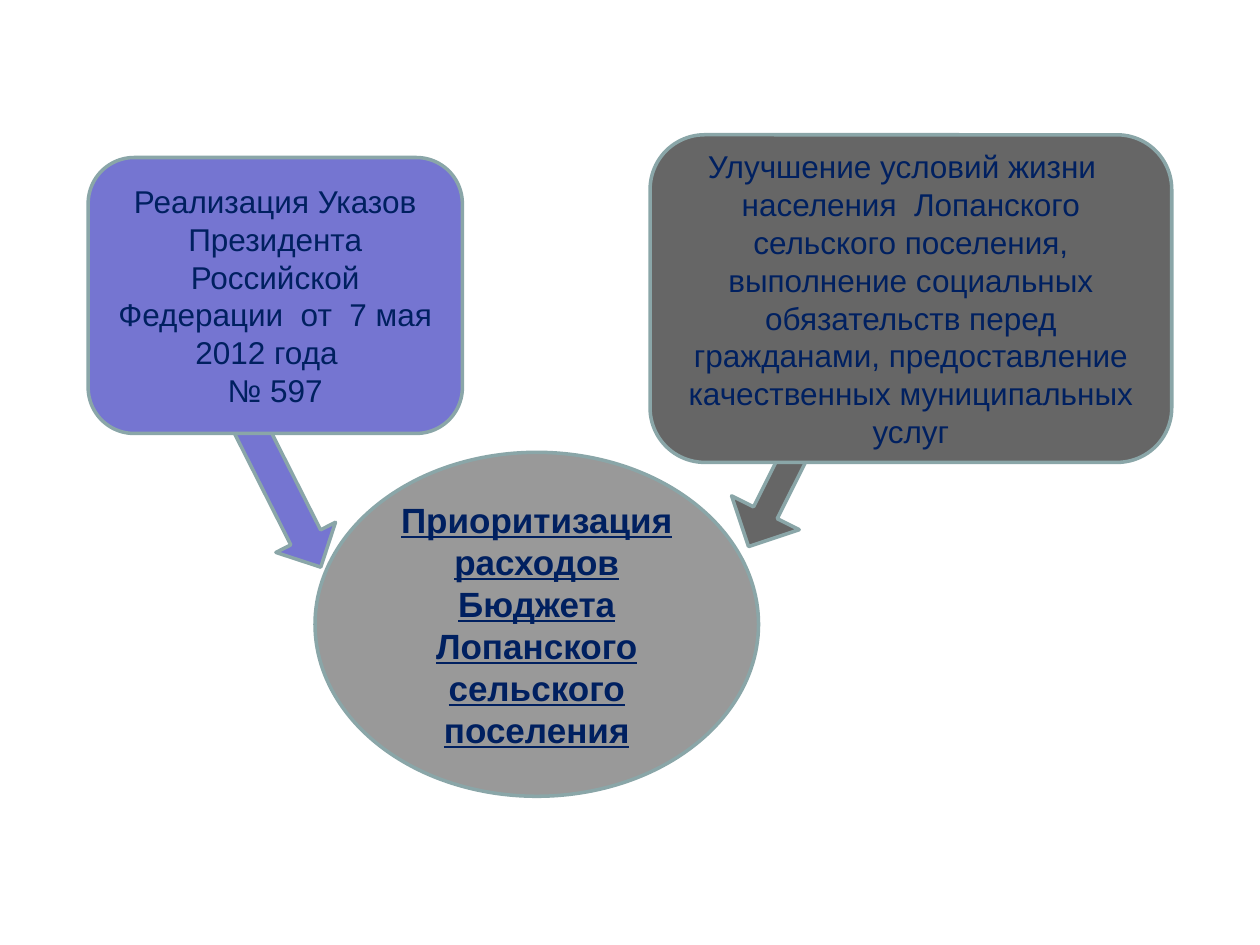
from dataclasses import dataclass

import pptx
import pptx.dml.color
import pptx.enum.shapes
import pptx.enum.text
import pptx.util

Inches = pptx.util.Inches
Shapes = pptx.enum.shapes.MSO_SHAPE


@dataclass(frozen=True)
class Theme:
    """Colours, font and sizes used on the slide."""
    violet: str = "7575D1"
    dark_gray: str = "666666"
    light_gray: str = "999999"
    outline: str = "8AA6A8"
    text: str = "002060"
    font: str = "Arial"
    body_size: int = 18
    goal_size: int = 20
    line_width: int = 2


THEME = Theme()


def color(value):
    """Turn a hex string into a colour."""
    return pptx.dml.color.RGBColor.from_string(value)


def add_outlined_shape(page, kind, box, fill):
    """Add a filled, outlined shape in a box of left, top, width, height."""
    shape = page.shapes.add_shape(kind, *map(Inches, box))
    shape.shadow.inherit = False
    shape.fill.solid()
    shape.fill.fore_color.rgb = color(fill)
    shape.line.color.rgb = color(THEME.outline)
    shape.line.width = pptx.util.Pt(THEME.line_width)
    return shape


def write_centered(shape, text, size, emphasis=False):
    """Write centred paragraphs in a shape, bold and underlined if emphasised."""
    frame = shape.text_frame
    frame.word_wrap = True
    frame.vertical_anchor = pptx.enum.text.MSO_ANCHOR.MIDDLE
    frame.text = text
    for para in frame.paragraphs:
        para.alignment = pptx.enum.text.PP_ALIGN.CENTER
        for span in para.runs:
            span.font.name = THEME.font
            span.font.size = pptx.util.Pt(size)
            span.font.color.rgb = color(THEME.text)
            span.font.bold = emphasis
            span.font.underline = emphasis


def add_goal(page, box, text):
    """Add the ellipse that holds the common goal."""
    ellipse = add_outlined_shape(page, Shapes.OVAL, box, THEME.light_gray)
    write_centered(ellipse, text, THEME.goal_size, emphasis=True)


def add_arrow(page, box, fill, rotation, shaft=0.5):
    """Add a rotated block arrow that points to the goal."""
    arrow = add_outlined_shape(page, Shapes.DOWN_ARROW, box, fill)
    arrow.adjustments[0] = shaft
    arrow.rotation = rotation


def add_reason(page, box, fill, text):
    """Add a rounded box with one reason."""
    reason = add_outlined_shape(page, Shapes.ROUNDED_RECTANGLE, box, fill)
    write_centered(reason, text, THEME.body_size)


def main():
    """Build the slide and save it."""
    deck = pptx.Presentation()
    deck.slide_width, deck.slide_height = Inches(10), Inches(7.5)
    page = deck.slides.add_slide(deck.slide_layouts[6])
    add_goal(page, (2.5, 3.59, 3.52, 2.73),
             "Приоритизация\nрасходов\nБюджета\nЛопанского сельского поселения")
    add_arrow(page, (1.99, 3.28, 0.53, 1.29), THEME.violet, 333.2)
    add_arrow(page, (5.86, 3.41, 0.6, 0.98), THEME.dark_gray, 26.6, shaft=0.35)
    add_reason(page, (0.7, 1.25, 2.97, 2.19), THEME.violet,
               "Реализация Указов Президента Российской Федерации  от  7 мая "
               "2012 года  \n№ 597")
    add_reason(page, (5.16, 1.07, 4.14, 2.6), THEME.dark_gray,
               "Улучшение условий жизни   населения  Лопанского сельского "
               "поселения, выполнение социальных обязательств перед гражданами, "
               "предоставление качественных муниципальных услуг")
    deck.save("out.pptx")


if __name__ == "__main__":
    main()
